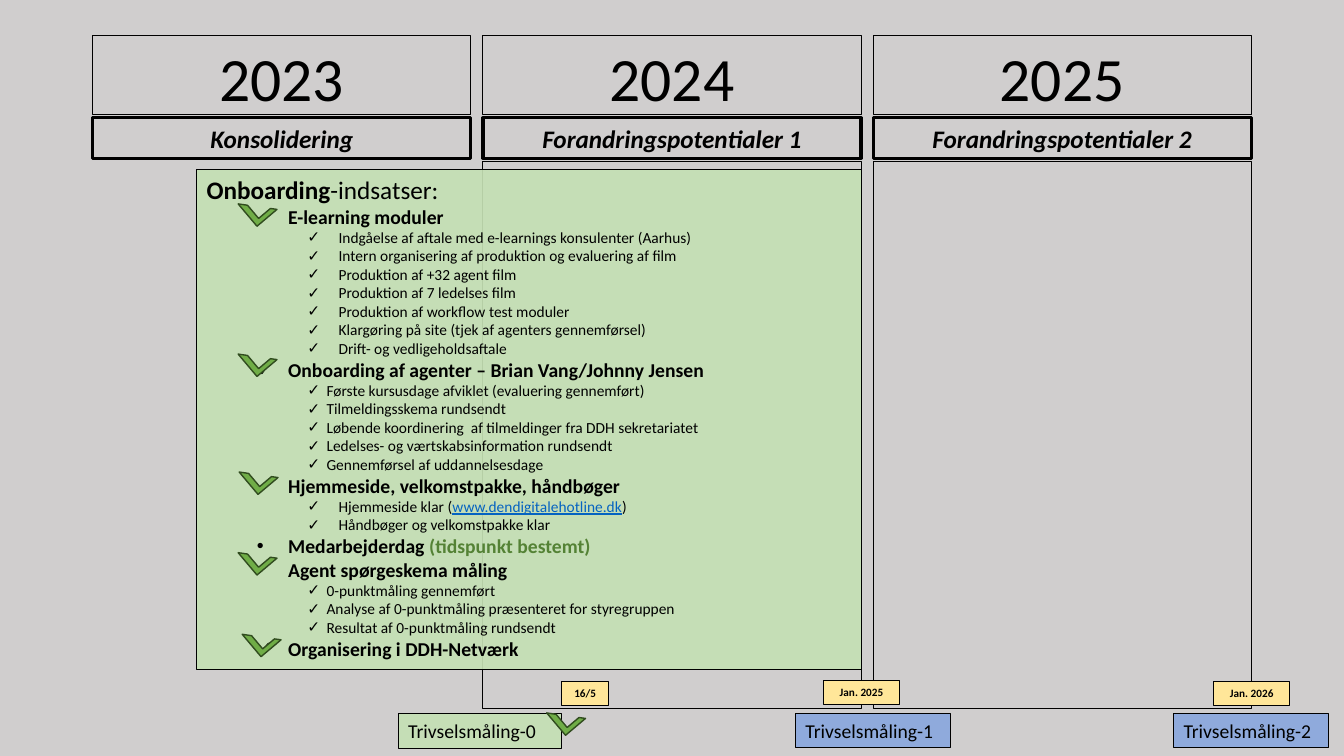
from pptx import Presentation, util as u
from pptx.dml.color import RGBColor
from pptx.enum import shapes, text
from pptx.oxml import ns
from lxml import etree

BLACK = RGBColor(0x00, 0x00, 0x00)
BACKGROUND = RGBColor(0xD0, 0xCE, 0xCE)
PALE_GREEN = RGBColor(0xC5, 0xE0, 0xB4)
GREEN = RGBColor(0x70, 0xAD, 0x47)
DARK_GREEN = RGBColor(0x31, 0x4C, 0x1F)
TEXT_GREEN = RGBColor(0x54, 0x82, 0x35)
BLUE = RGBColor(0x8F, 0xAA, 0xDC)
LINK_BLUE = RGBColor(0x05, 0x63, 0xC1)
YELLOW = RGBColor(0xFF, 0xE6, 0x99)

FONT = "Calibri"
CHECK, DOT = "✓", "•"

# Year grid, in inches
GRID_LEFT, COLUMN_WIDTH, COLUMN_PITCH = 0.92, 3.75, 3.87
YEARS = [
    ("2023", "Konsolidering"),
    ("2024", "Forandringspotentialer 1"),
    ("2025", "Forandringspotentialer 2"),
]

# Heading runs, heading bullet, indent and hang of the tasks, tasks
WIDE, NARROW = (1.31, 0.31), (1.19, 0.19)
EFFORTS = [
    ([("E-learning moduler", BLACK)], CHECK, WIDE, [
        "Indgåelse af aftale med e-learnings konsulenter (Aarhus)",
        "Intern organisering af produktion og evaluering af film",
        "Produktion af +32 agent film",
        "Produktion af 7 ledelses film",
        "Produktion af workflow test moduler",
        "Klargøring på site (tjek af agenters gennemførsel)",
        "Drift- og vedligeholdsaftale"]),
    ([("Onboarding af agenter – Brian Vang/Johnny Jensen", BLACK)], CHECK, NARROW, [
        "Første kursusdage afviklet (evaluering gennemført)",
        "Tilmeldingsskema rundsendt",
        "Løbende koordinering  af tilmeldinger fra DDH sekretariatet",
        "Ledelses- og værtskabsinformation rundsendt",
        "Gennemførsel af uddannelsesdage"]),
    ([("Hjemmeside, velkomstpakke, håndbøger", BLACK)], CHECK, WIDE, [
        ("Hjemmeside klar (", "www.dendigitalehotline.dk", ")"),
        "Håndbøger og velkomstpakke klar"]),
    ([("Medarbejderdag ", BLACK), ("(tidspunkt bestemt)", TEXT_GREEN)], DOT, WIDE, []),
    ([("Agent spørgeskema måling", BLACK)], DOT, NARROW, [
        "0-punktmåling gennemført",
        "Analyse af 0-punktmåling præsenteret for styregruppen",
        "Resultat af 0-punktmåling rundsendt"]),
    ([("Organisering i DDH-Netværk", BLACK)], CHECK, WIDE, []),
]

# Survey box, its fill, its date label and the label's box
SURVEYS = [
    ("Trivselsmåling-0", (3.95, 7.08, 1.62, 0.35), PALE_GREEN, "16/5", (5.57, 6.76, 0.47, 0.24)),
    ("Trivselsmåling-1", (7.89, 7.08, 1.54, 0.34), BLUE, "Jan. 2025", (8.17, 6.75, 0.75, 0.24)),
    ("Trivselsmåling-2", (11.64, 7.08, 1.54, 0.34), BLUE, "Jan. 2026", (12.04, 6.76, 0.75, 0.24)),
]
DONE_MARKS = [(2.41, 1.92), (2.41, 3.41), (2.42, 4.58), (2.41, 5.38), (2.45, 6.19), (5.47, 6.97)]


def add_box(slide, box, fill=None, line=BLACK, line_width=0.75, opacity=None,
            kind=shapes.MSO_SHAPE.RECTANGLE):
    shape = slide.shapes.add_shape(kind, *(u.Inches(length) for length in box))
    shape.shadow.inherit = False
    if fill is None:
        shape.fill.background()
    else:
        shape.fill.solid()
        shape.fill.fore_color.rgb = fill
    if opacity:
        color = shape.fill._xPr.find(".//" + ns.qn("a:srgbClr"))
        etree.SubElement(color, ns.qn("a:alpha"), val=str(opacity * 1000))
    shape.line.color.rgb = line
    shape.line.width = u.Pt(line_width)
    frame = shape.text_frame
    frame.word_wrap = True
    frame.vertical_anchor = text.MSO_ANCHOR.TOP
    frame.paragraphs[0].alignment = text.PP_ALIGN.LEFT
    return shape


def add_run(paragraph, words, size, color=BLACK, bold=False, italic=False, underline=False):
    run = paragraph.add_run()
    run.text = words
    font = run.font
    font.name, font.size = FONT, u.Pt(size)
    font.bold, font.italic, font.underline = bold, italic, underline
    font.color.rgb = color


def add_label(slide, box, words, size, centred=True, bold=False, italic=False, **look):
    frame = add_box(slide, box, **look).text_frame
    frame.auto_size = text.MSO_AUTO_SIZE.SHAPE_TO_FIT_TEXT
    paragraph = frame.paragraphs[0]
    if centred:
        paragraph.alignment = text.PP_ALIGN.CENTER
    add_run(paragraph, words, size, bold=bold, italic=italic)


def add_bullet(frame, level, bullet, indent, hang):
    paragraph = frame.add_paragraph()
    paragraph.level = level
    paragraph.alignment = text.PP_ALIGN.LEFT
    properties = paragraph._p.get_or_add_pPr()
    properties.set("marL", str(u.Inches(indent)))
    properties.set("indent", str(-u.Inches(hang)))
    etree.SubElement(properties, ns.qn("a:buFont"), typeface="Arial")
    etree.SubElement(properties, ns.qn("a:buChar"), char=bullet)
    return paragraph


def add_year(slide, left, year, theme, with_body):
    add_label(slide, (left, 0.35, COLUMN_WIDTH, 0.79), year, 44)
    add_label(slide, (left, 1.17, COLUMN_WIDTH, 0.4), theme, 18,
              bold=True, italic=True, line_width=2.25)
    if with_body:
        add_box(slide, (left, 1.6, COLUMN_WIDTH, 5.43))


def add_onboarding(slide, box):
    frame = add_box(slide, box, fill=PALE_GREEN, opacity=92).text_frame
    frame.auto_size = text.MSO_AUTO_SIZE.SHAPE_TO_FIT_TEXT
    add_run(frame.paragraphs[0], "Onboarding", 18, bold=True)
    add_run(frame.paragraphs[0], "-indsatser:", 18)
    for heading, bullet, indents, tasks in EFFORTS:
        paragraph = add_bullet(frame, 1, bullet, 0.81, 0.31)
        for words, color in heading:
            add_run(paragraph, words, 14, color, bold=True)
        for task in tasks:
            paragraph = add_bullet(frame, 2, CHECK, *indents)
            if isinstance(task, str):
                add_run(paragraph, task, 11)
            else:
                before, address, after = task
                add_run(paragraph, before, 11)
                add_run(paragraph, address, 11, LINK_BLUE, underline=True)
                add_run(paragraph, after, 11)


def add_survey(slide, name, box, fill, date, date_box):
    add_label(slide, box, name, 14, centred=False, fill=fill,
              opacity=92 if fill == PALE_GREEN else None)
    add_label(slide, date_box, date, 8, bold=True, fill=YELLOW)


def add_done_mark(slide, left, top):
    mark = add_box(slide, (left, top, 0.29, 0.26), fill=GREEN, line=DARK_GREEN,
                   line_width=1, kind=shapes.MSO_SHAPE.HALF_FRAME)
    mark.adjustments[0], mark.adjustments[1] = 0.242, 0.189
    mark.rotation = 229.9


def main():
    presentation = Presentation()
    presentation.slide_width, presentation.slide_height = u.Inches(13.33), u.Inches(7.5)
    slide = presentation.slides.add_slide(presentation.slide_layouts[6])
    slide.background.fill.solid()
    slide.background.fill.fore_color.rgb = BACKGROUND

    # Year columns; the first has no body frame
    for column, (year, theme) in enumerate(YEARS):
        add_year(slide, GRID_LEFT + column * COLUMN_PITCH, year, theme, column > 0)

    # Onboarding panel, surveys and check marks
    add_onboarding(slide, (1.95, 1.68, 6.59, 4.96))
    for survey in SURVEYS:
        add_survey(slide, *survey)
    for position in DONE_MARKS:
        add_done_mark(slide, *position)

    presentation.save("out.pptx")


if __name__ == "__main__":
    main()
